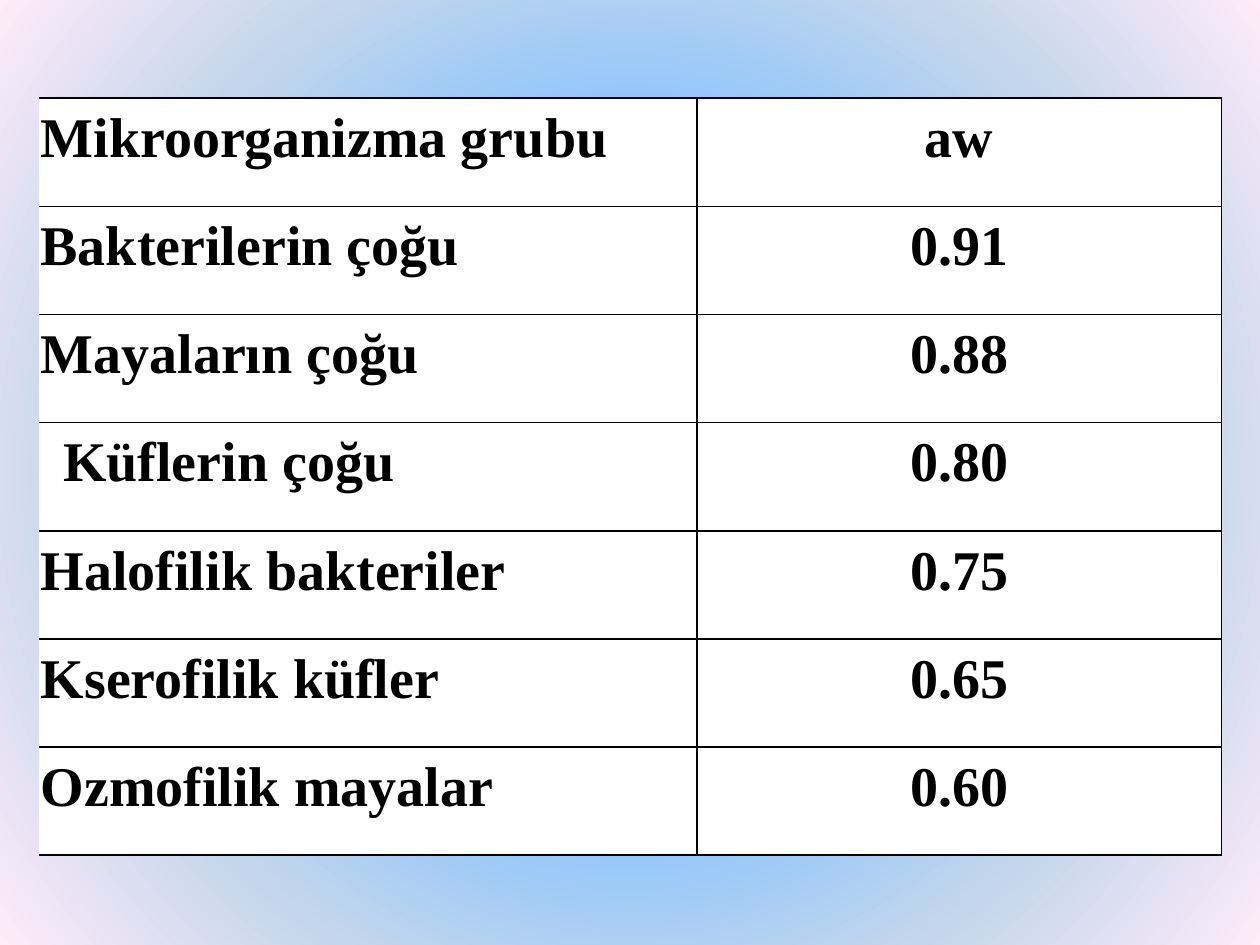
"""Builds a slide with a table of water activity limits by microorganism group."""
from dataclasses import dataclass

from lxml import etree
from pptx import Presentation
from pptx.dml.color import RGBColor
from pptx.enum import text
from pptx.oxml.ns import qn
from pptx.util import Cm, Pt

COLOURS = {"ink": "000000", "paper": "FFFFFF"}
BACKGROUND_STOPS = {0: "5E9EFF", 40: "85C2FF", 70: "C4D6EB", 100: "FFEBFA"}
COLUMN_WIDTHS = (Cm(13.26), Cm(10.57))
ROW_HEIGHT = Cm(2.18)
CELL_FORMAT = {"margin_left": Cm(0.03), "margin_right": Cm(0.03),
               "margin_top": 0, "margin_bottom": 0,
               "vertical_anchor": text.MSO_ANCHOR.TOP}
PARAGRAPH_FORMAT = {"line_spacing": 1.15, "space_before": Pt(24)}
FONT_FORMAT = {"name": "Times New Roman", "size": Pt(32), "bold": True}


@dataclass
class Group:
    name: str
    water_activity: str
    indent: float = 0.2


GROUPS = [
    Group("Mikroorganizma grubu", "aw"),
    Group("Bakterilerin çoğu", "0.91"),
    Group("Mayaların çoğu", "0.88"),
    Group("Küflerin çoğu", "0.80", 1.42),
    Group("Halofilik bakteriler", "0.75", 0.53),
    Group("Kserofilik küfler", "0.65"),
    Group("Ozmofilik mayalar", "0.60", 0.53),
]


def apply(target, values: dict) -> None:
    """Set each named attribute on the target."""
    for key, value in values.items():
        setattr(target, key, value)


def add_colour(parent, colour: str) -> None:
    """Append an RGB colour element."""
    etree.SubElement(parent, qn("a:srgbClr"), val=colour)


def paint_background(slide) -> None:
    """Give the slide a circular gradient that spreads from its centre."""
    slide.background.fill.gradient()
    gradient = next(slide.element.iter(qn("a:gradFill")))
    for child in list(gradient):
        gradient.remove(child)
    stops = etree.SubElement(gradient, qn("a:gsLst"))
    for position, colour in BACKGROUND_STOPS.items():
        add_colour(etree.SubElement(stops, qn("a:gs"), pos=str(position * 1000)), colour)
    circle = etree.SubElement(gradient, qn("a:path"), path="circle")
    etree.SubElement(circle, qn("a:fillToRect"), dict.fromkeys("ltrb", "50000"))


def draw_borders(cell, open_left: bool) -> None:
    """Rule the cell on every side, leaving the left one open if asked."""
    properties = cell._tc.get_or_add_tcPr()
    for index, side in enumerate("LRTB"):
        line = etree.Element(qn(f"a:ln{side}"), w=str(Pt(1)))
        if side == "L" and open_left:
            etree.SubElement(line, qn("a:noFill"))
        else:
            add_colour(etree.SubElement(line, qn("a:solidFill")), COLOURS["ink"])
        properties.insert(index, line)


def fill_cell(cell, wording: str, indent: float, centred: bool) -> None:
    """Write and format one table cell."""
    apply(cell, CELL_FORMAT)
    cell.fill.solid()
    cell.fill.fore_color.rgb = RGBColor.from_string(COLOURS["paper"])
    draw_borders(cell, open_left=not centred)
    paragraph = cell.text_frame.paragraphs[0]
    apply(paragraph, PARAGRAPH_FORMAT)
    paragraph.alignment = text.PP_ALIGN.CENTER if centred else text.PP_ALIGN.LEFT
    apply_indent = paragraph._p.get_or_add_pPr().set
    apply_indent("marL", str(Cm(indent)))
    apply_indent("indent", str(Cm(-0.97)))
    run = paragraph.add_run()
    run.text = wording
    apply(run.font, FONT_FORMAT)
    run.font.color.rgb = RGBColor.from_string(COLOURS["ink"])


def add_group_table(slide, groups: list[Group]) -> None:
    """Add the table with one row per group."""
    table = slide.shapes.add_table(
        len(groups), len(COLUMN_WIDTHS), Cm(0.79), Cm(1.98),
        sum(COLUMN_WIDTHS), ROW_HEIGHT * len(groups)).table
    apply(table, {"first_row": False, "horz_banding": False})
    for column, width in zip(table.columns, COLUMN_WIDTHS):
        column.width = width
    for row, group in zip(table.rows, groups):
        row.height = ROW_HEIGHT
        name_cell, activity_cell = row.cells
        fill_cell(name_cell, group.name, group.indent, centred=False)
        fill_cell(activity_cell, group.water_activity, 0, centred=True)


def main() -> None:
    """Build and save the presentation."""
    presentation = Presentation()
    apply(presentation, {"slide_width": Cm(25.4), "slide_height": Cm(19.05)})
    slide = presentation.slides.add_slide(presentation.slide_layouts[6])
    paint_background(slide)
    add_group_table(slide, GROUPS)
    presentation.save("out.pptx")


if __name__ == "__main__":
    main()
